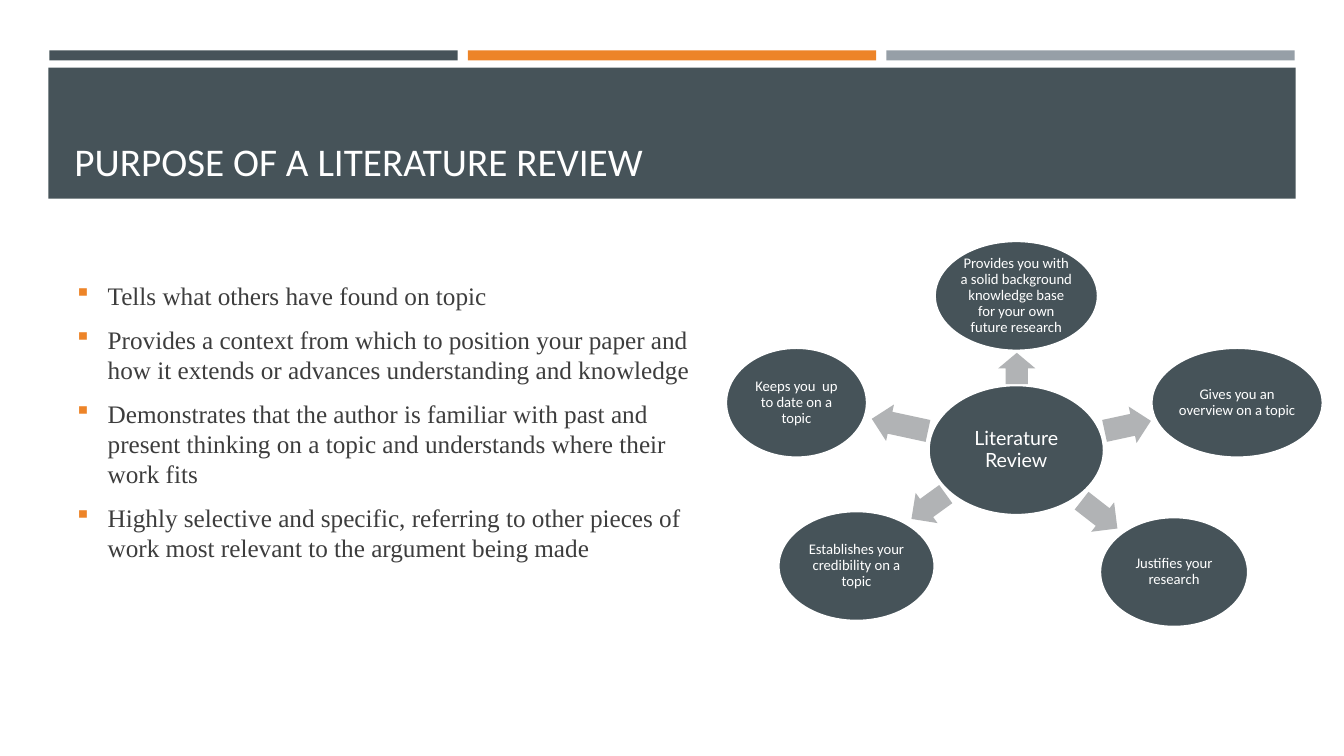
"""Build the slide on the purpose of a literature review."""
from lxml import etree
from pptx import Presentation
from pptx.dml.color import RGBColor
from pptx.enum.shapes import MSO_SHAPE
from pptx.enum.text import MSO_ANCHOR, PP_ALIGN
from pptx.oxml.ns import qn
from pptx.util import Inches, Pt

RECT, OVAL, ARROW = MSO_SHAPE.RECTANGLE, MSO_SHAPE.OVAL, MSO_SHAPE.RIGHT_ARROW
MIDDLE, BOTTOM = MSO_ANCHOR.MIDDLE, MSO_ANCHOR.BOTTOM
LEFT, CENTER = PP_ALIGN.LEFT, PP_ALIGN.CENTER
SLATE = RGBColor(0x46, 0x53, 0x59)
ORANGE = RGBColor(0xED, 0x84, 0x28)
STEEL = RGBColor(0x96, 0x9F, 0xA7)
SILVER = RGBColor(0xB1, 0xB3, 0xB5)
INK = RGBColor(0x3D, 0x3D, 0x3D)
WHITE = RGBColor(0xFF, 0xFF, 0xFF)

POINTS = [
    "Tells what others have found on topic",
    "Provides a context from which to position your paper and how it extends "
    "or advances understanding and knowledge",
    "Demonstrates that the author is familiar with past and present thinking "
    "on a topic and understands where their work fits",
    "Highly selective and specific, referring to other pieces of work most "
    "relevant to the argument being made",
]
SPOKES = [
    ((9.27, 2.39, 1.62), (9.93, 3.47, 0.31), 270,
     "Provides you with a solid background knowledge base for your own future research"),
    ((11.42, 3.45, 1.7), (10.95, 4.04, 0.47), 347.8, "Gives you an overview on a topic"),
    ((10.91, 5.13, 1.47), (10.68, 4.92, 0.45), 37.9, "Justifies your research"),
    ((7.72, 5.07, 1.55), (9, 4.84, 0.42), 144.1, "Establishes your credibility on a topic"),
    ((7.2, 3.45, 1.4), (8.64, 4.03, 0.57), 192.2, "Keeps you  up to date on a topic"),
]


def write(frame, *lines, size=10.5, font="Calibri", color=WHITE, align=CENTER,
          anchor=MIDDLE, inset=None, leading=1.0, before=0, after=0):
    frame.word_wrap = True
    frame.vertical_anchor = anchor
    if inset is not None:
        frame.margin_left = frame.margin_right = Inches(inset)
        frame.margin_top = frame.margin_bottom = Inches(inset)
    for i, line in enumerate(lines):
        para = frame.add_paragraph() if i else frame.paragraphs[0]
        para.alignment = align
        para.line_spacing = leading
        para.space_before, para.space_after = Pt(before), Pt(after)
        run = para.add_run()
        run.text = line
        run.font.size, run.font.name = Pt(size), font
        run.font.color.rgb = color


class Deck:
    def __init__(self):
        self.show = Presentation()
        self.show.slide_width, self.show.slide_height = Inches(13.33), Inches(7.5)
        self.slide = self.show.slides.add_slide(self.show.slide_layouts[6])

    def shape(self, kind, box, fill):
        item = self.slide.shapes.add_shape(kind, *map(Inches, box))
        item.shadow.inherit = False
        item.fill.solid()
        item.fill.fore_color.rgb = fill
        item.line.fill.background()
        return item

    def text(self, box, *lines, **style):
        frame = self.slide.shapes.add_textbox(*map(Inches, box)).text_frame
        write(frame, *lines, **style)
        return frame

    def bullets(self, box, lines, **style):
        for para in self.text(box, *lines, **style).paragraphs:
            props = para._p.get_or_add_pPr()
            props.set("marL", str(Inches(0.33)))
            props.set("indent", str(-Inches(0.33)))
            tint = etree.SubElement(props, qn("a:buClr"))
            etree.SubElement(tint, qn("a:srgbClr"), val=str(ORANGE))
            etree.SubElement(props, qn("a:buSzPct"), val="92000")
            etree.SubElement(props, qn("a:buChar"), char="▪")

    def oval(self, box, label, **style):
        item = self.shape(OVAL, box, SLATE)
        item.line.color.rgb = WHITE
        item.line.width = Pt(1.75)
        write(item.text_frame, label, inset=0.02, leading=0.9, **style)

    def arrow(self, box, turn):
        item = self.shape(ARROW, box, SILVER)
        item.adjustments[0], item.adjustments[1] = 0.6, 0.5
        item.rotation = turn


def main():
    deck = Deck()
    for i, color in enumerate((SLATE, ORANGE, STEEL)):
        deck.shape(RECT, (0.49 + 4.15 * i, 0.5, 4.05, 0.1), color)
    deck.shape(RECT, (0.48, 0.67, 12.37, 1.3), SLATE)
    deck.text((0.64, 0.77, 12.06, 1.11), "PURPOSE OF A LITERATURE REVIEW",
              size=28, align=LEFT, anchor=BOTTOM)
    deck.bullets((0.64, 2.38, 6.56, 3.6), POINTS, size=18, font="Times New Roman",
                 color=INK, align=LEFT, before=3.6, after=6)
    deck.oval((9.21, 3.82, 1.74, 1.29), "Literature Review", size=14, font="Lato")
    for spot, tip, turn, label in SPOKES:
        deck.arrow((*tip, 0.37), turn)
        deck.oval((*spot, 1.09), label)
    deck.show.save("out.pptx")


if __name__ == "__main__":
    main()
